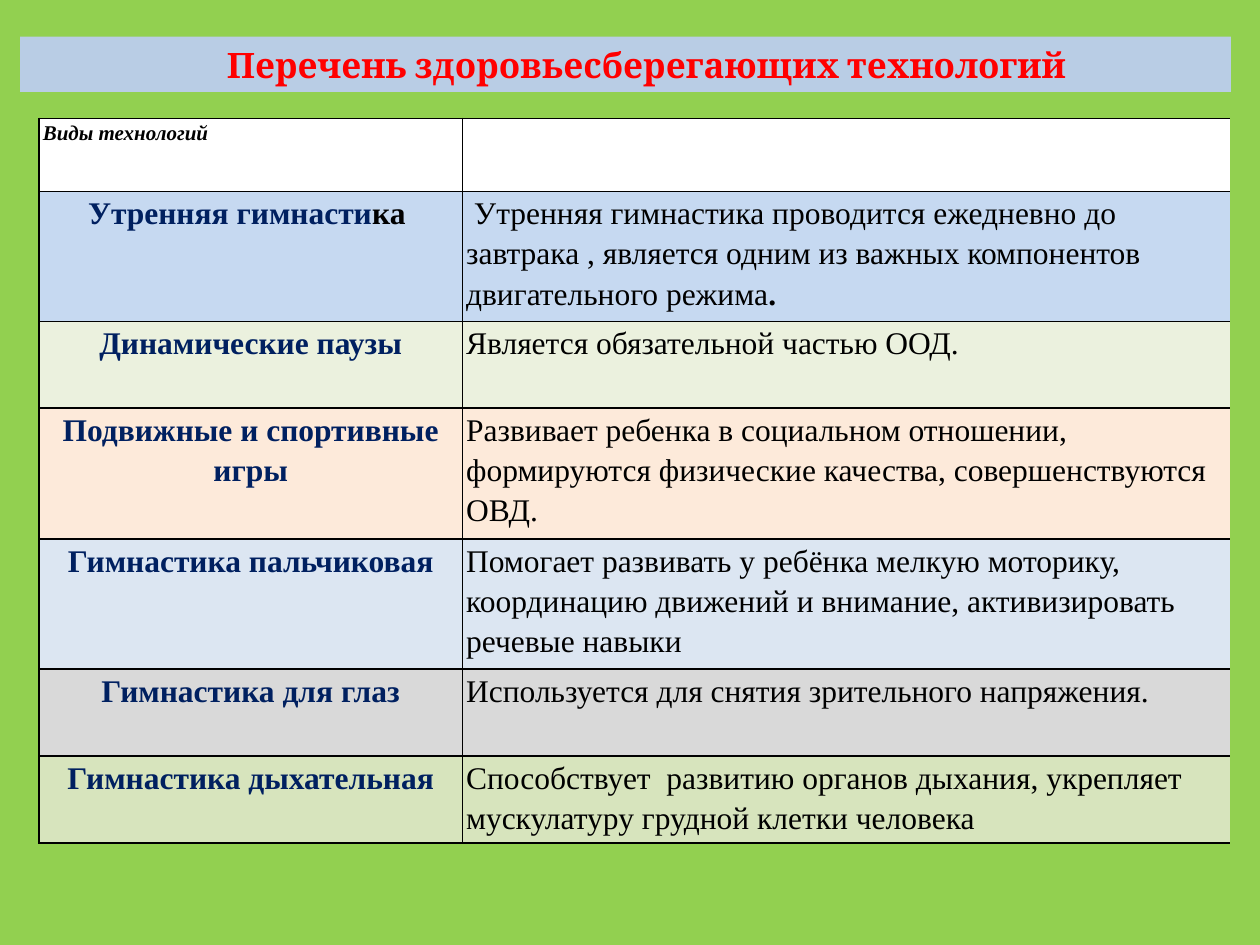
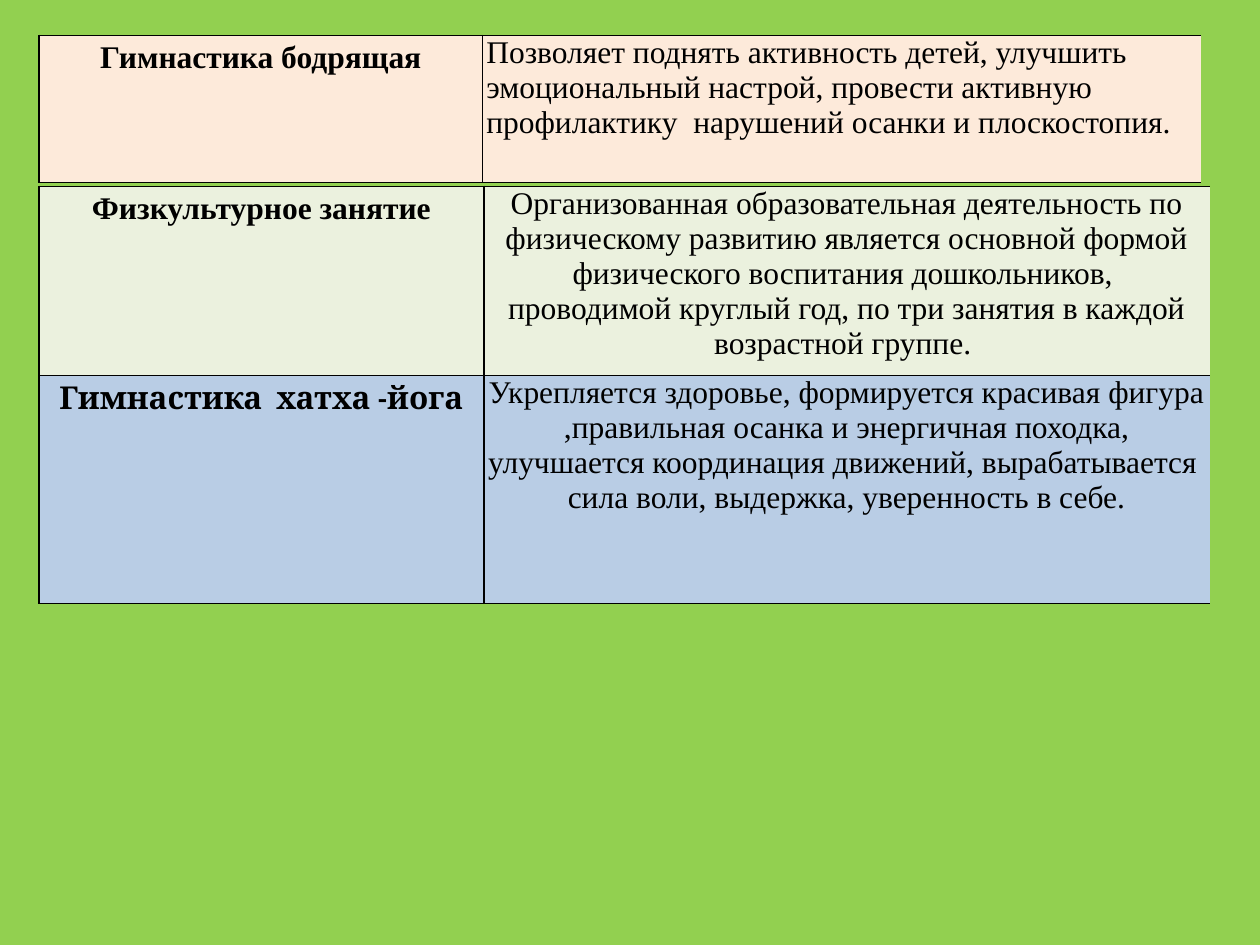
from lxml import etree
from pptx import Presentation
from pptx.dml.color import RGBColor
from pptx.enum import text as t
from pptx.oxml import ns
from pptx.util import Inches, Pt

GREEN = RGBColor(0x92, 0xD0, 0x50)
BLUE = RGBColor(0xB9, 0xCD, 0xE5)
SKY = RGBColor(0xC6, 0xD9, 0xF1)
PALE_BLUE = RGBColor(0xDC, 0xE6, 0xF2)
PALE_GREEN = RGBColor(0xEB, 0xF1, 0xDE)
OLIVE = RGBColor(0xD7, 0xE4, 0xBD)
PEACH = RGBColor(0xFD, 0xEA, 0xDA)
GREY = RGBColor(0xD9, 0xD9, 0xD9)
WHITE = RGBColor(0xFF, 0xFF, 0xFF)
BLACK = RGBColor(0, 0, 0)
NAVY = RGBColor(0x00, 0x20, 0x60)
RED = RGBColor(0xFF, 0, 0)

SERIF = "Times New Roman"
HEADING = "Cambria"
NO_STYLE = "{2D5ABB26-0587-4C30-8999-92F81FD0307C}"
LEFT, CENTER = t.PP_ALIGN.LEFT, t.PP_ALIGN.CENTER
TABLE_LEFT = 0.31

TECHNOLOGIES = [
    (SKY, [("Утренняя гимнасти", NAVY), ("ка ", BLACK)],
     " Утренняя гимнастика проводится ежедневно до завтрака , является одним из важных "
     "компонентов двигательного режима"),
    (PALE_GREEN, [("Динамические паузы", NAVY)],
     "Является обязательной частью ООД."),
    (PEACH, [("Подвижные и спортивные игры", NAVY)],
     "Развивает ребенка в социальном отношении, формируются физические качества, "
     "совершенствуются ОВД."),
    (PALE_BLUE, [("Гимнастика пальчиковая", NAVY)],
     "Помогает развивать у ребёнка мелкую моторику, координацию движений и внимание, "
     "активизировать речевые навыки"),
    (GREY, [("Гимнастика для глаз", NAVY)],
     "Используется для снятия зрительного напряжения."),
    (OLIVE, [("Гимнастика дыхательная", NAVY)],
     "Способствует  развитию органов дыхания, укрепляет мускулатуру грудной клетки человека"),
]
INVIGORATING = (
    PEACH, "Гимнастика бодрящая", SERIF,
    "Позволяет поднять активность детей, улучшить эмоциональный настрой, провести активную "
    " профилактику  нарушений осанки и плоскостопия.")
LESSONS = [
    (PALE_GREEN, "Физкультурное занятие", SERIF,
     "Организованная образовательная деятельность по физическому развитию является основной "
     "формой физического воспитания дошкольников,  проводимой круглый год, по три занятия "
     "в каждой возрастной группе. "),
    (BLUE, "Гимнастика  хатха -йога", HEADING,
     "Укрепляется здоровье, формируется красивая фигура ,правильная осанка и энергичная "
     "походка, улучшается координация движений, вырабатывается  сила воли, выдержка, "
     "уверенность в себе."),
]


def add_text(para, text, font=SERIF, size=18, color=BLACK, bold=False, italic=False,
             align=LEFT, spacing=None):
    """Append a formatted span to a paragraph."""
    para.alignment = align
    if spacing:
        para.line_spacing = spacing
    span = para.add_run()
    span.text = text
    span.font.name, span.font.size = font, Pt(size)
    span.font.bold, span.font.italic = bold, italic
    span.font.color.rgb = color


def add_page(deck, layout):
    """Add a page with the shared green background."""
    page = deck.slides.add_slide(deck.slide_layouts[layout])
    page.background.fill.solid()
    page.background.fill.fore_color.rgb = GREEN
    return page


def set_title(page, text):
    """Turn the title placeholder into a blue band with red text."""
    box = page.shapes.title
    box.left, box.top = Inches(0.16), Inches(0.29)
    box.width, box.height = Inches(9.61), Inches(0.44)
    box.fill.solid()
    box.fill.fore_color.rgb = BLUE
    frame = box.text_frame
    frame.vertical_anchor = t.MSO_ANCHOR.MIDDLE
    frame.margin_top = frame.margin_bottom = Inches(0.05)
    para = frame.paragraphs[0]
    add_text(para, text, font=HEADING, size=20, color=RED, bold=True, align=CENTER)
    para._p.get_or_add_pPr().set("indent", str(Inches(0.39)))


def style_cell(cell, color):
    """Fill a cell and rule its left, top and bottom edges."""
    cell.margin_left = cell.margin_right = Inches(0.03)
    cell.margin_top = cell.margin_bottom = 0
    cell.fill.solid()
    cell.fill.fore_color.rgb = color
    props = cell._tc.get_or_add_tcPr()
    for place, edge in enumerate(("lnL", "lnT", "lnB")):
        line = etree.Element(ns.qn(f"a:{edge}"), w=str(Pt(1)))
        solid = etree.SubElement(line, ns.qn("a:solidFill"))
        etree.SubElement(solid, ns.qn("a:srgbClr"), val=str(BLACK))
        props.insert(place, line)


def add_grid(page, top, widths, heights, colors):
    """Add a ruled table with one fill per row."""
    frame = page.shapes.add_table(len(heights), len(widths), Inches(TABLE_LEFT), Inches(top),
                                  Inches(sum(widths)), Inches(sum(heights)))
    table = frame.table
    table.first_row = table.horz_banding = False
    table._tbl.tblPr.find(ns.qn("a:tableStyleId")).text = NO_STYLE
    for column, width in zip(table.columns, widths):
        column.width = Inches(width)
    for row, height, color in zip(table.rows, heights, colors):
        row.height = Inches(height)
        for cell in row.cells:
            style_cell(cell, color)
    return table


def cell_para(table, row, column):
    """Return the first paragraph of a cell."""
    return table.cell(row, column).text_frame.paragraphs[0]


def add_technologies(page):
    """Add the main table of technologies."""
    colors = [WHITE] + [color for color, _, _ in TECHNOLOGIES]
    table = add_grid(page, 0.94, (3.36, 6.09), (0.58, 1.03, 0.69, 1.04, 1.03, 0.69, 0.69), colors)
    add_text(cell_para(table, 0, 0), "Виды технологий", size=12, bold=True, italic=True,
             spacing=1.15)
    for row, (_, name, purpose) in enumerate(TECHNOLOGIES, 1):
        for part, color in name:
            add_text(cell_para(table, row, 0), part, color=color, bold=True, align=CENTER,
                     spacing=1.15)
        add_text(cell_para(table, row, 1), purpose, spacing=1.15)
    add_text(cell_para(table, 1, 1), ". ", bold=True, spacing=1.15)


def add_activities(page, top, widths, heights, activities, align):
    """Add a table of activities with black names."""
    table = add_grid(page, top, widths, heights, [activity[0] for activity in activities])
    for row, (_, name, font, purpose) in enumerate(activities):
        add_text(cell_para(table, row, 0), name, font=font, bold=True, align=CENTER, spacing=1.15)
        add_text(cell_para(table, row, 1), purpose, align=align)


def main():
    """Build the two pages and save the deck."""
    deck = Presentation()
    deck.slide_width, deck.slide_height = Inches(10), Inches(7.5)
    page = add_page(deck, 5)
    set_title(page, "Перечень здоровьесберегающих технологий ")
    add_technologies(page)
    page = add_page(deck, 6)
    add_activities(page, 1.48, (3.53, 5.76), (1.5, 1.81), LESSONS, CENTER)
    add_activities(page, 0.28, (3.52, 5.7), (1.17,), [INVIGORATING], LEFT)
    deck.save("out.pptx")


if __name__ == "__main__":
    main()
